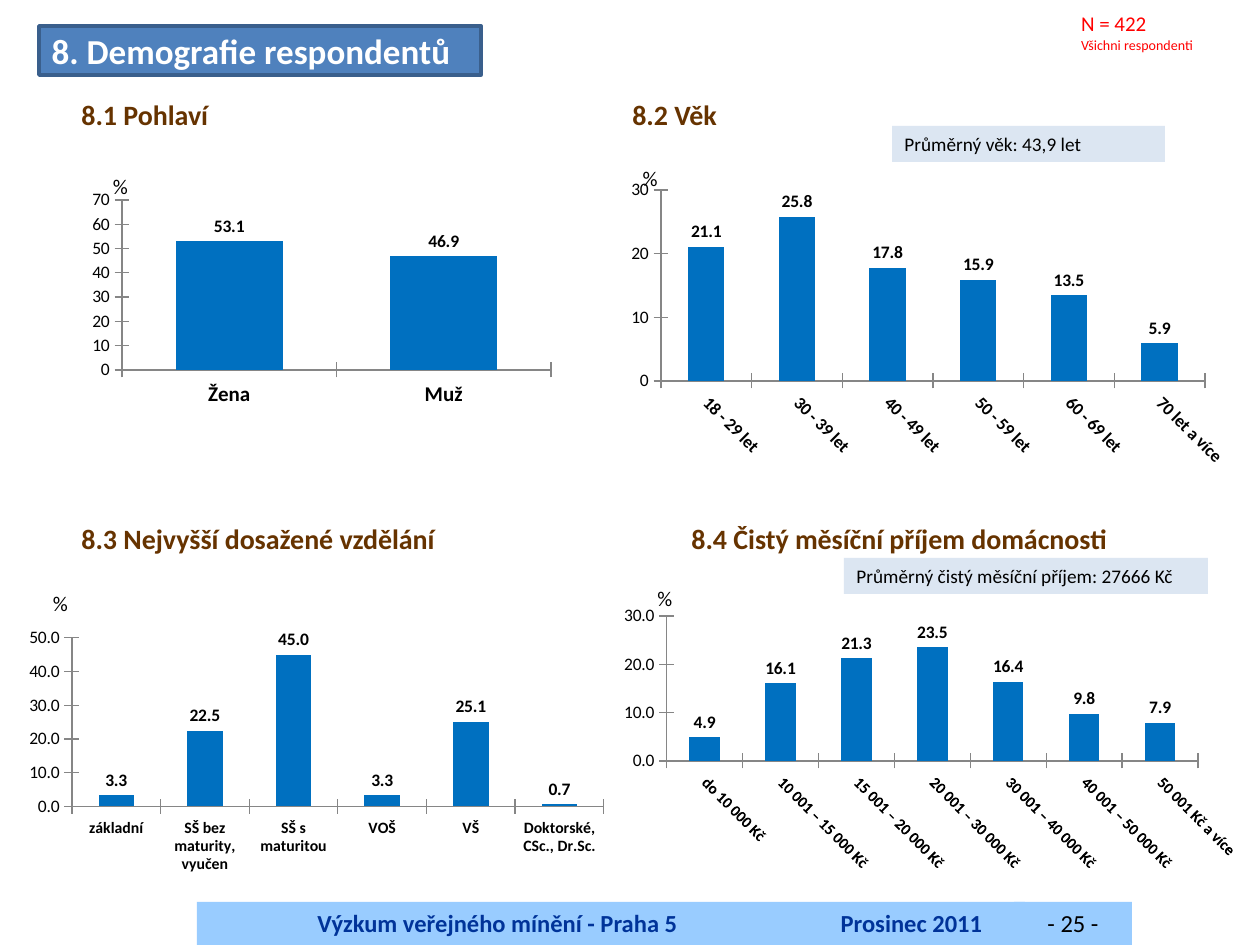
import pptx
import pptx.util
import pptx.chart.data
import pptx.dml.color
import pptx.enum.chart
import pptx.enum.shapes
import pptx.enum.text
import pptx.oxml
from pptx.oxml.ns import nsdecls

FONT = "Calibri"
BLACK, BAR, AXIS = "000000", "0070C0", "868686"
ALIGN = pptx.enum.text.PP_ALIGN
ANCHOR = pptx.enum.text.MSO_ANCHOR

TITLE = "8. Demografie respondentů"
# text, box in px
HEADINGS = [
    ("8.1 Pohlaví", (69, 91, 184, 47)),
    ("8.2 Věk", (620, 91, 494, 47)),
    ("8.3 Nejvyšší dosažené vzdělání", (69, 515, 412, 47)),
    ("8.4 Čistý měsíční příjem domácnosti", (679, 515, 496, 47)),
]
AVERAGES = [
    ("Průměrný věk: 43,9 let", (892, 126, 273, 36)),
    ("Průměrný čistý měsíční příjem: 27666 Kč", (844, 558, 364, 36)),
]
# text, box, colour, bold
FOOTER = [
    ("Výzkum veřejného mínění - Praha 5", (197, 902, 601, 43), "003399", True),
    ("Prosinec 2011", (798, 902, 227, 43), "003399", True),
    ("- 25 -", (1014, 902, 118, 43), BLACK, False),
]
SAMPLE = [("N = 422", 12), ("Všichni respondenti", 8)]
SAMPLE_BOX = (1076, 6, 170, 53)

# box and plot are left, top, width, height; unit is left, top of the % title
CHARTS = [
    dict(box=(69, 110, 501, 325), plot=(122, 200, 429, 170), unit=(109, 168),
         cats=["Žena", "Muž"], vals=[53.1, 46.9],
         top=70, gap=100, cat_size=12, fmt="General", slanted=False),
    dict(box=(624, 125, 614, 382), plot=(661, 190, 544, 191), unit=(639, 160),
         cats=["18 - 29 let", "30 - 39 let", "40 - 49 let", "50 - 59 let",
               "60 - 69 let", "70 let a více"],
         vals=[21.1, 25.8, 17.8, 15.9, 13.5, 5.9],
         top=30, gap=150, cat_size=10, fmt="General", slanted=True),
    dict(box=(25, 512, 586, 362), plot=(72, 638, 532, 169), unit=(49, 586),
         cats=["základní", "SŠ bez maturity, vyučen", "SŠ s maturitou", "VOŠ",
               "VŠ", "Doktorské, CSc., Dr.Sc."],
         vals=[3.3, 22.5, 45, 3.3, 25.1, 0.7],
         top=50, gap=150, cat_size=9, fmt="0.0", slanted=False),
    dict(box=(620, 490, 619, 389), plot=(667, 616, 535, 145), unit=(654, 580),
         cats=["do 10 000 Kč", "10 001 – 15 000 Kč", "15 001 – 20 000 Kč",
               "20 001 – 30 000 Kč", "30 001 – 40 000 Kč", "40 001 – 50 000 Kč",
               "50 001 Kč a více"],
         vals=[4.9, 16.1, 21.3, 23.5, 16.4, 9.8, 7.9],
         top=30, gap=150, cat_size=9, fmt="0.0", slanted=True),
]


def px(n):
    return pptx.util.Emu(round(n * 914400 / 126))


def rgb(value):
    return pptx.dml.color.RGBColor.from_string(value)


def paint(fill, color):
    fill.solid()
    fill.fore_color.rgb = rgb(color)


def set_font(font, size, color=BLACK, bold=False):
    values = dict(name=FONT, size=pptx.util.Pt(size), bold=bold)
    for key, value in values.items():
        setattr(font, key, value)
    font.color.rgb = rgb(color)


def write(s, lines, color=BLACK, bold=False, align=ALIGN.LEFT, anchor=ANCHOR.TOP):
    """Fill a shape with (text, size) lines, one paragraph each."""
    tf = s.text_frame
    tf.word_wrap = True
    tf.vertical_anchor = anchor
    for i, (text, size) in enumerate(lines):
        p = tf.paragraphs[0] if i == 0 else tf.add_paragraph()
        p.alignment = align
        r = p.add_run()
        r.text = text
        set_font(r.font, size, color, bold)


def add_text(slide, box, lines, **style):
    s = slide.shapes.add_textbox(*map(px, box))
    write(s, lines, **style)
    return s


def add_band(slide, box, fill, lines, **style):
    s = slide.shapes.add_shape(
        pptx.enum.shapes.MSO_SHAPE.RECTANGLE, *map(px, box))
    s.shadow.inherit = False
    paint(s.fill, fill)
    s.line.fill.background()
    write(s, lines, **style)


def place(element, box, point, size=None):
    """Give a chart title, or a plot area if size is given, a fixed place."""
    left, top, width, height = box
    parts = ['<c:layoutTarget val="inner"/>'] if size else []
    parts += ['<c:xMode val="edge"/>', '<c:yMode val="edge"/>']
    values = dict(x=(point[0] - left) / width, y=(point[1] - top) / height)
    if size:
        values.update(w=size[0] / width, h=size[1] / height)
    parts += [f'<c:{k} val="{v:.4f}"/>' for k, v in values.items()]
    for old in element.findall(pptx.oxml.ns.qn("c:layout")):
        element.remove(old)
    layout = pptx.oxml.parse_xml(
        f'<c:layout {nsdecls("c")}><c:manualLayout>{"".join(parts)}'
        '</c:manualLayout></c:layout>')
    element.insert(0 if size else 1, layout)


def add_column_chart(slide, box, plot, unit, cats, vals, top, gap, cat_size,
                     fmt, slanted):
    data = pptx.chart.data.CategoryChartData(number_format=fmt)
    data.categories = cats
    data.add_series("Series 1", vals)
    chart = slide.shapes.add_chart(
        pptx.enum.chart.XL_CHART_TYPE.COLUMN_CLUSTERED,
        *map(px, box), data).chart
    set_font(chart.font, 10)
    chart.has_legend = False

    title = chart.chart_title
    r = title.text_frame.paragraphs[0].add_run()
    r.text = "%"
    set_font(r.font, 12)
    place(title._element, box, unit)
    place(chart._chartSpace.chart.plotArea, box, plot[:2], plot[2:])

    for axis, size in ((chart.category_axis, cat_size), (chart.value_axis, 10)):
        axis.has_major_gridlines = False
        axis.major_tick_mark = pptx.enum.chart.XL_TICK_MARK.CROSS
        axis.format.line.color.rgb = rgb(AXIS)
        axis.format.line.width = pptx.util.Pt(0.75)
        set_font(axis.tick_labels.font, size, bold=axis is not chart.value_axis)
    set_font(chart.category_axis.tick_labels.font, cat_size, bold=True)
    set_font(chart.value_axis.tick_labels.font, 10)
    body = chart.category_axis._element.txPr.bodyPr
    body.set("rot", str(45 * 60000 if slanted else 0))
    body.set("vert", "horz")
    scale = dict(minimum_scale=0, maximum_scale=top, major_unit=10)
    for key, value in scale.items():
        setattr(chart.value_axis, key, value)

    bars = chart.plots[0]
    bars.gap_width = gap
    bars.vary_by_categories = False
    paint(bars.series[0].format.fill, BAR)
    bars.has_data_labels = True
    labels = bars.data_labels
    labels.show_value = True
    labels.position = pptx.enum.chart.XL_LABEL_POSITION.OUTSIDE_END
    set_font(labels.font, 10, bold=True)
    for item in (labels, chart.value_axis.tick_labels):
        item.number_format = fmt
        item.number_format_is_linked = False


def format_title(s):
    s.left, s.top, s.width, s.height = map(px, (39, 26, 442, 49))
    s._element.spPr.append(pptx.oxml.parse_xml(
        f'<a:prstGeom {nsdecls("a")} prst="roundRect"><a:avLst/></a:prstGeom>'))
    paint(s.fill, "4F81BD")
    s.line.color.rgb = rgb("3A5F8C")
    s.line.width = pptx.util.Pt(2)
    write(s, [(TITLE, 20)], color="FFFFFF", bold=True, anchor=ANCHOR.MIDDLE)


def main():
    prs = pptx.Presentation()
    prs.slide_width, prs.slide_height = px(1260), px(945)
    slide = prs.slides.add_slide(prs.slide_layouts[5])
    format_title(slide.shapes.title)
    for text, box, color, bold in FOOTER:
        add_band(slide, box, "99CCFF", [(text, 14)], color=color, bold=bold,
                 align=ALIGN.CENTER)
    for chart in CHARTS:
        add_column_chart(slide, **chart)
    for text, box in HEADINGS:
        add_text(slide, box, [(text, 16)], color="663300", bold=True)
    for text, box in AVERAGES:
        add_band(slide, box, "DCE6F2", [(text, 11)])
    tf = add_text(slide, SAMPLE_BOX, SAMPLE, color="FF0000").text_frame
    for side in ("left", "top", "right", "bottom"):
        setattr(tf, f"margin_{side}", px(5))
    prs.save("out.pptx")


if __name__ == "__main__":
    main()
